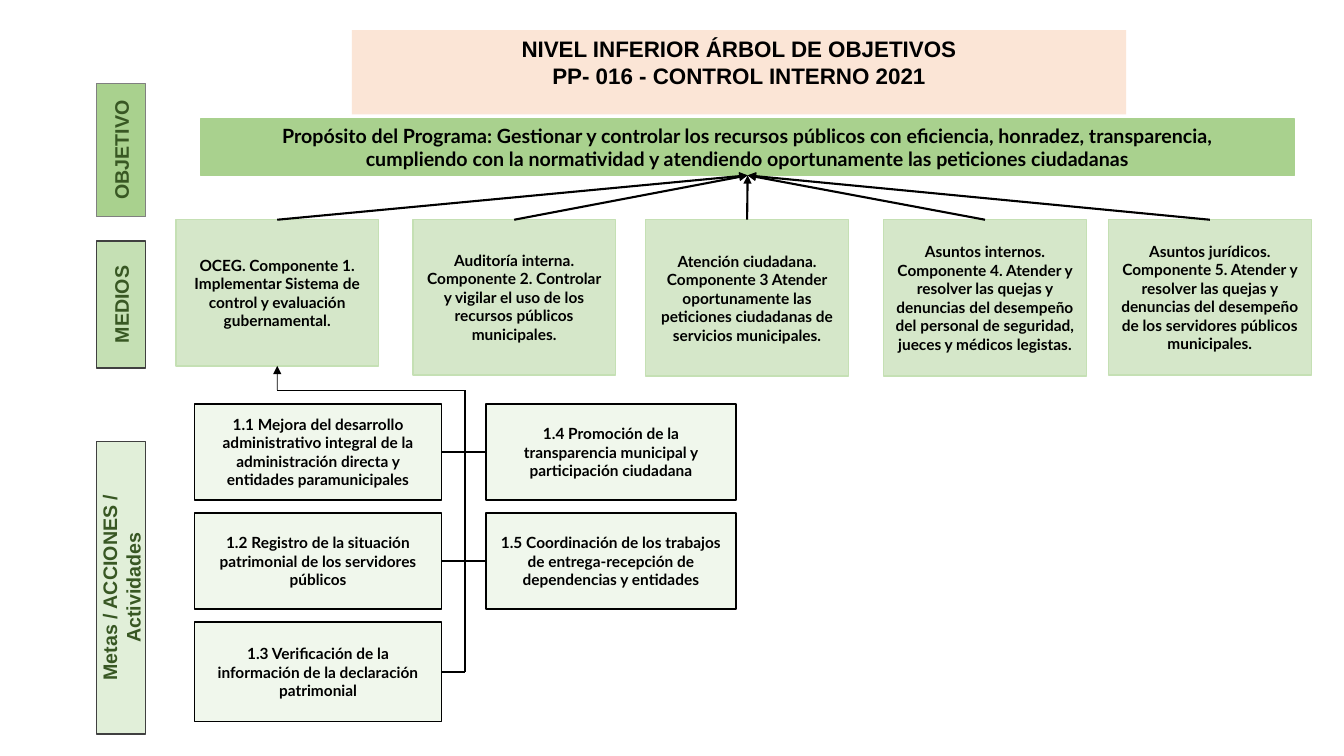
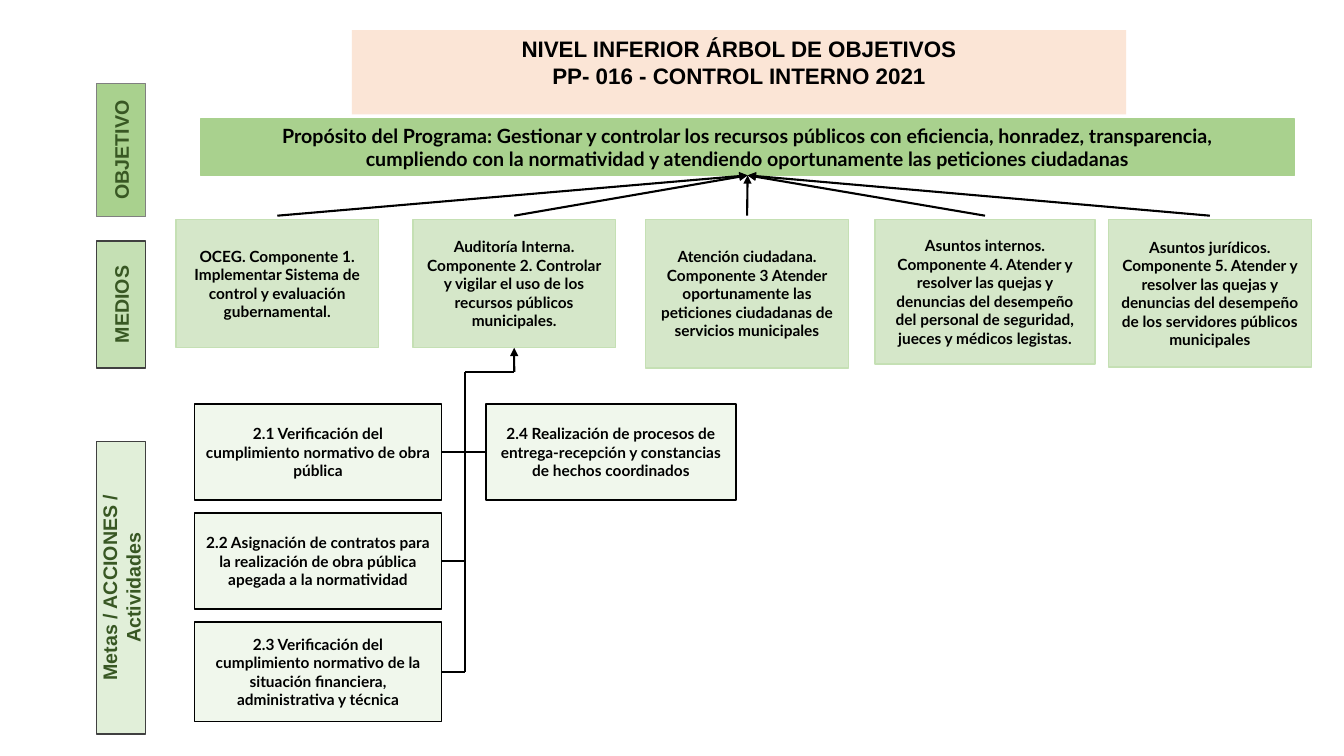
"""Build the two lower-level objective tree slides."""
import lxml.etree
import pptx
import pptx.dml.color
import pptx.enum.shapes
import pptx.enum.text
import pptx.oxml.ns
import pptx.util

Inches = pptx.util.Inches
Pt = pptx.util.Pt
RGBColor = pptx.dml.color.RGBColor
qn = pptx.oxml.ns.qn
PROCESS = pptx.enum.shapes.MSO_SHAPE.FLOWCHART_PROCESS
STRAIGHT = pptx.enum.shapes.MSO_CONNECTOR.STRAIGHT
TOP, LEFT, BOTTOM, RIGHT = range(4)

BLACK = RGBColor(0x00, 0x00, 0x00)
PEACH = RGBColor(0xFB, 0xE5, 0xD6)
GREEN = RGBColor(0xA9, 0xD1, 0x8E)
PALE_GREEN = RGBColor(0xC5, 0xE0, 0xB4)
STRONG_GREEN = RGBColor(0x70, 0xAD, 0x47)
DARK_GREEN = RGBColor(0x38, 0x57, 0x23)
GRAY = RGBColor(0x80, 0x80, 0x80)
DARK_GRAY = RGBColor(0x40, 0x40, 0x40)

TITLE_FONT = {"name": "Arial", "size": Pt(16), "bold": True}
LABEL_FONT = {"name": "Arial", "size": Pt(14), "bold": True}
PURPOSE_FONT = {"name": "Lato", "size": Pt(14), "bold": True}
BOX_FONT = {"name": "Lato", "size": Pt(11), "bold": True}

TITLE = "NIVEL INFERIOR ÁRBOL DE OBJETIVOS\nPP- 016 - CONTROL INTERNO 2021"
PURPOSE = (
    "Propósito del Programa: Gestionar y controlar los recursos públicos con eficiencia, honradez, transparencia,\n"
    "cumpliendo con la normatividad y atendiendo oportunamente las peticiones ciudadanas"
)
LABELS = [
    ("OBJETIVO", 0.83, 1.32, GREEN, GRAY, 100),
    ("MEDIOS", 2.39, 1.26, PALE_GREEN, DARK_GRAY, 100),
    ("Metas / ACCIONES / Actividades", 4.38, 2.9, PALE_GREEN, DARK_GRAY, 50),
]
COMPONENTS = [
    "OCEG. Componente 1. Implementar Sistema de control y evaluación gubernamental.",
    "Auditoría {interna}. Componente 2. Controlar y vigilar el uso de los recursos públicos municipales.",
    "Atención ciudadana. Componente 3 Atender oportunamente las peticiones ciudadanas de servicios municipales{end}",
    "Asuntos internos. Componente 4. Atender y resolver las quejas y denuncias del desempeño "
    "del personal de seguridad, jueces y médicos legistas.",
    "Asuntos jurídicos. Componente 5. Atender y resolver las quejas y denuncias del desempeño "
    "de los servidores públicos municipales{end}",
]
CENTERS = [2.75, 5.1, 7.41, 9.77, 12]
COMPONENT_TOP = 2.18
TRUNK_X = 4.61
ROW_TOP, ROW_PITCH = 4.01, 1.08
ROW_HEIGHTS = [0.95, 0.95, 0.99]

SLIDES = [
    {
        "wording": {"interna": "interna", "end": "."},
        "widths": [2.01] * 5,
        "heights": [1.45, 1.54, 1.55, 1.55, 1.54],
        "arrow_gap": 0,
        "parent": 0,
        "trunk_top": 3.87,
        "elbow_width": 0.5,
        "left": [
            "1.1 Mejora del desarrollo administrativo integral de la administración directa y entidades paramunicipales",
            "1.2 Registro de la situación patrimonial de los servidores públicos",
            "1.3 Verificación de la información de la declaración patrimonial",
        ],
        "right": [
            "1.4 Promoción de la transparencia municipal y participación ciudadana",
            "1.5 Coordinación de los trabajos de entrega-recepción de dependencias y entidades",
        ],
    },
    {
        "wording": {"interna": "Interna", "end": ""},
        "widths": [2.01, 2.01, 2.01, 2.18, 2.01],
        "heights": [1.27, 1.27, 1.47, 1.43, 1.46],
        "arrow_gap": 0.04,
        "parent": 1,
        "trunk_top": 3.69,
        "elbow_width": 1.5,
        "left": [
            "2.1 Verificación del cumplimiento normativo de obra pública",
            "2.2 Asignación de contratos para la realización de obra pública apegada a la normatividad",
            "2.3 Verificación del cumplimiento normativo de la situación financiera, administrativa y técnica",
        ],
        "right": [
            "2.4 Realización de procesos de entrega-recepción y constancias de hechos coordinados",
        ],
    },
]


class Tree:
    """Hold the style and the current slide of the objective tree."""

    def __init__(self, prs):
        self.prs = prs
        self.s = None

    def new_slide(self):
        self.s = self.prs.slides.add_slide(self.prs.slide_layouts[5])

    def set_text(self, sp, text, fmt, color):
        tf = sp.text_frame
        tf.word_wrap = True
        tf.text = text
        for p in tf.paragraphs:
            p.alignment = pptx.enum.text.PP_ALIGN.CENTER
            for r in p.runs:
                for name, value in fmt.items():
                    setattr(r.font, name, value)
                r.font.color.rgb = color

    def title(self, text):
        sp = self.s.shapes.title
        sp.left, sp.top, sp.width, sp.height = map(Inches, (3.49, 0.3, 7.68, 0.64))
        sp.fill.solid()
        sp.fill.fore_color.rgb = PEACH
        self.set_text(sp, text, TITLE_FONT, BLACK)
        sp.text_frame.vertical_anchor = pptx.enum.text.MSO_ANCHOR.TOP
        sp.text_frame.auto_size = pptx.enum.text.MSO_AUTO_SIZE.SHAPE_TO_FIT_TEXT

    def box(self, text, at, fill, line, opacity=100, fmt=BOX_FONT, color=BLACK):
        sp = self.s.shapes.add_shape(PROCESS, *map(Inches, at))
        sp.shadow.inherit = False
        sp.fill.solid()
        sp.fill.fore_color.rgb = fill
        if opacity < 100:
            clr = sp._element.spPr.find(".//" + qn("a:srgbClr"))
            lxml.etree.SubElement(clr, qn("a:alpha"), val=str(opacity * 1000))
        sp.line.color.rgb = line
        sp.line.width = Pt(1)
        self.set_text(sp, text, fmt, color)
        return sp

    def label(self, text, top, length, fill, line, opacity):
        thickness, center_x = 0.49, 1.2
        at = (center_x - length / 2, top + (length - thickness) / 2, length, thickness)
        sp = self.box(text, at, fill, line, opacity, LABEL_FONT, DARK_GREEN)
        sp.rotation = 270

    def component(self, text, center, width, height):
        at = (center - width / 2, COMPONENT_TOP, width, height)
        return self.box(text, at, STRONG_GREEN, PALE_GREEN, 29)

    def activity(self, text, row, left, width):
        at = (left, ROW_TOP + row * ROW_PITCH, width, ROW_HEIGHTS[row])
        return self.box(text, at, PALE_GREEN, BLACK, 25)

    def line(self, start, end, width=1.5, arrow=False):
        """Draw from start to end, each a point in inches or a (shape, side) pair."""
        glued = [not isinstance(e[0], (int, float)) for e in (start, end)]
        points = [(0, 0) if g else e for g, e in zip(glued, (start, end))]
        c = self.s.shapes.add_connector(STRAIGHT, *(Inches(v) for pt in points for v in pt))
        if glued[0]:
            c.begin_connect(*start)
        if glued[1]:
            c.end_connect(*end)
        c.line.color.rgb = BLACK
        c.line.width = Pt(width)
        spPr = c._element.spPr
        if arrow:
            lxml.etree.SubElement(spPr.find(qn("a:ln")), qn("a:tailEnd"), type="triangle")
        lxml.etree.SubElement(spPr, qn("a:effectLst"))

    def means(self, data):
        purpose = self.box(PURPOSE, (1.99, 1.18, 10.85, 0.56), GREEN, GREEN, fmt=PURPOSE_FONT)
        shapes = []
        for text, center, width, height in zip(COMPONENTS, CENTERS, data["widths"], data["heights"]):
            sp = self.component(text.format(**data["wording"]), center, width, height)
            gap = data["arrow_gap"]
            start = (center, COMPONENT_TOP - gap) if gap else (sp, TOP)
            self.line(start, (purpose, BOTTOM), arrow=True)
            shapes.append(sp)
        return shapes

    def activities(self, data, parent):
        lefts = [self.activity(t, i, 1.93, 2.45) for i, t in enumerate(data["left"])]
        rights = [self.activity(t, i, 4.82, 2.48) for i, t in enumerate(data["right"])]
        for row, sp in enumerate(lefts):
            middle = ROW_TOP + row * ROW_PITCH + ROW_HEIGHTS[row] / 2
            start = (rights[row], LEFT) if row < len(rights) else (TRUNK_X, middle)
            self.line(start, (sp, RIGHT))
        corner = (CENTERS[data["parent"]], data["trunk_top"])
        trunk_head = (TRUNK_X, data["trunk_top"])
        self.line(trunk_head, (TRUNK_X, middle))
        self.line(trunk_head, corner, data["elbow_width"])
        self.line(corner, (parent, BOTTOM), data["elbow_width"], arrow=True)


def main():
    prs = pptx.Presentation()
    prs.slide_width, prs.slide_height = Inches(13.33), Inches(7.5)
    tree = Tree(prs)
    for data in SLIDES:
        tree.new_slide()
        tree.title(TITLE)
        for label in LABELS:
            tree.label(*label)
        components = tree.means(data)
        tree.activities(data, components[data["parent"]])
    prs.save("out.pptx")


if __name__ == "__main__":
    main()
